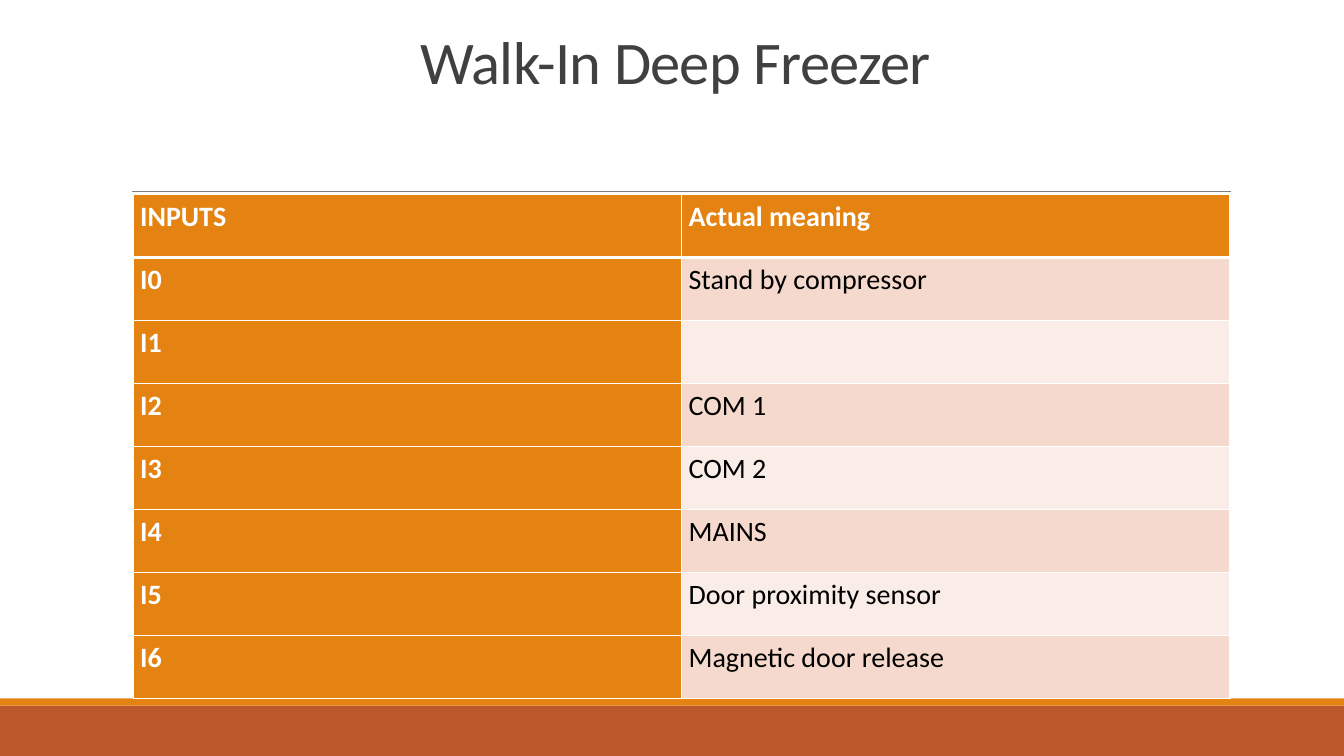
import pptx
import pptx.dml.color
import pptx.enum.shapes
import pptx.enum.text
import pptx.oxml.ns
import pptx.util
from lxml import etree
from pptx.util import Inches

ORANGE, RUST, WHITE = "E48312", "BD582C", "FFFFFF"
BANDS = ["F5D9CC", "FAEDE7"]
ROWS = [
    ("INPUTS", "Actual meaning"),
    ("I0", "Stand by compressor"),
    ("I1", ""),
    ("I2", "COM 1"),
    ("I3", "COM 2"),
    ("I4", "MAINS"),
    ("I5", "Door proximity sensor"),
    ("I6", "Magnetic door release"),
]


def paint(color_format, color):
    color_format.rgb = pptx.dml.color.RGBColor.from_string(color)


def add_border(cell, side, points):
    """Append a white border; side is L, R, T or B, called in that order before the fill."""
    line = etree.SubElement(cell._tc.get_or_add_tcPr(), pptx.oxml.ns.qn(f"a:ln{side}"),
                            w=str(pptx.util.Pt(points)))
    fill = etree.SubElement(line, pptx.oxml.ns.qn("a:solidFill"))
    etree.SubElement(fill, pptx.oxml.ns.qn("a:srgbClr"), val=WHITE)


deck = pptx.Presentation()
deck.slide_width, deck.slide_height = Inches(13.33), Inches(7.5)
slide = deck.slides.add_slide(deck.slide_layouts[5])

# Footer bands and the rule under the title
for top, height, color in [(7, 0.5, RUST), (6.93, 0.07, ORANGE)]:
    band = slide.shapes.add_shape(pptx.enum.shapes.MSO_SHAPE.RECTANGLE,
                                  0, Inches(top), deck.slide_width, Inches(height))
    band.shadow.inherit = False
    band.fill.solid()
    paint(band.fill.fore_color, color)
    band.line.fill.background()

rule = slide.shapes.add_connector(pptx.enum.shapes.MSO_CONNECTOR.STRAIGHT,
                                  Inches(1.31), Inches(1.9), Inches(12.21), Inches(1.9))
paint(rule.line.color, "808080")
rule.line.width = pptx.util.Pt(0.5)
etree.SubElement(rule._element.spPr, pptx.oxml.ns.qn("a:effectLst"))

# Title
title = slide.shapes.title
title.left, title.top, title.width, title.height = map(Inches, (1.2, 0.31, 11, 0.7))
frame = title.text_frame
frame.word_wrap = True
frame.auto_size = pptx.enum.text.MSO_AUTO_SIZE.NONE
frame.vertical_anchor = pptx.enum.text.MSO_ANCHOR.BOTTOM
para = frame.paragraphs[0]
para.alignment = pptx.enum.text.PP_ALIGN.CENTER
para.line_spacing = 0.85
span = para.add_run()
span.text = "Walk-In Deep Freezer"
span.font.name, span.font.size = "Calibri", pptx.util.Pt(43.2)
paint(span.font.color, "404040")
span.font._element.set("spc", "-50")

# Input table
table = slide.shapes.add_table(len(ROWS), 2, Inches(1.32), Inches(1.93),
                               Inches(10.88), Inches(5)).table
for row_index, texts in enumerate(ROWS):
    for column_index, text in enumerate(texts):
        cell = table.cell(row_index, column_index)
        is_heading = row_index == 0 or column_index == 0
        cell.margin_left = cell.margin_right = Inches(0.07)
        cell.margin_top = cell.margin_bottom = 0
        for side in "LRTB":
            meets_header = (row_index, side) in [(0, "B"), (1, "T")]
            add_border(cell, side, 3 if meets_header else 1)
        cell.fill.solid()
        paint(cell.fill.fore_color, ORANGE if is_heading else BANDS[(row_index - 1) % 2])
        if text:
            para = cell.text_frame.paragraphs[0]
            para.line_spacing = 1.15
            span = para.add_run()
            span.text = text
            span.font.name, span.font.size = "Calibri", pptx.util.Pt(20)
            span.font.bold = is_heading
            paint(span.font.color, WHITE if is_heading else "000000")

deck.save("out.pptx")
